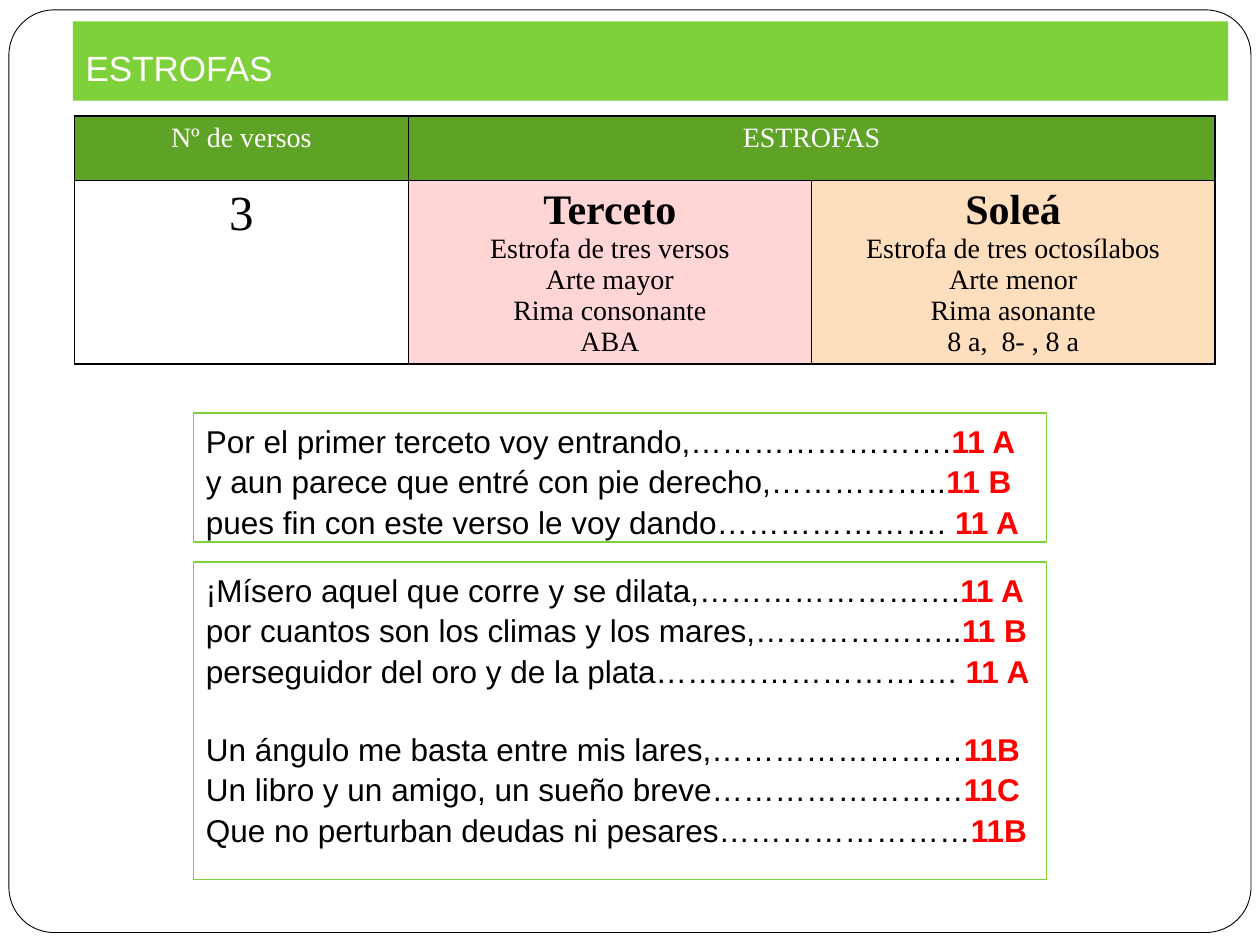
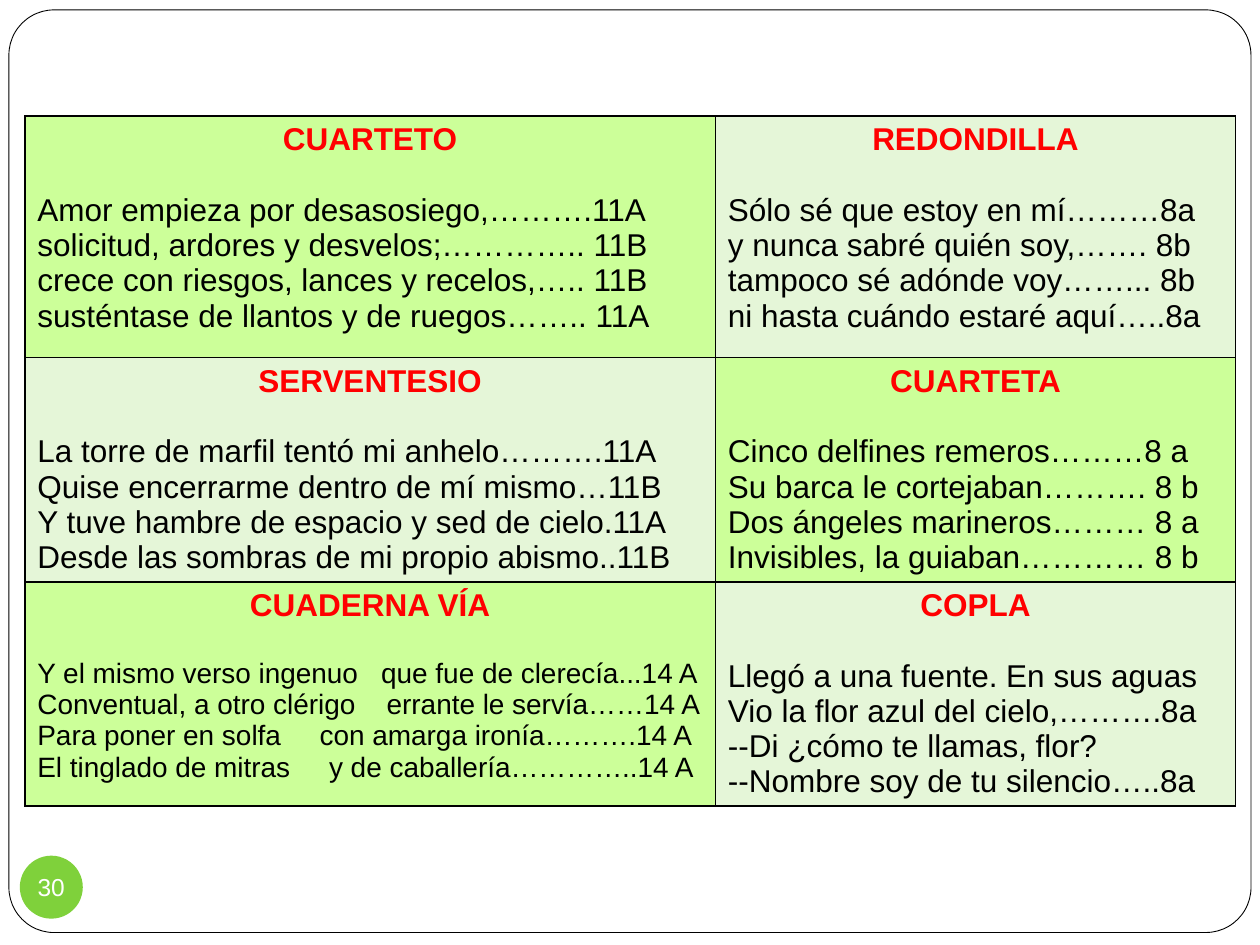
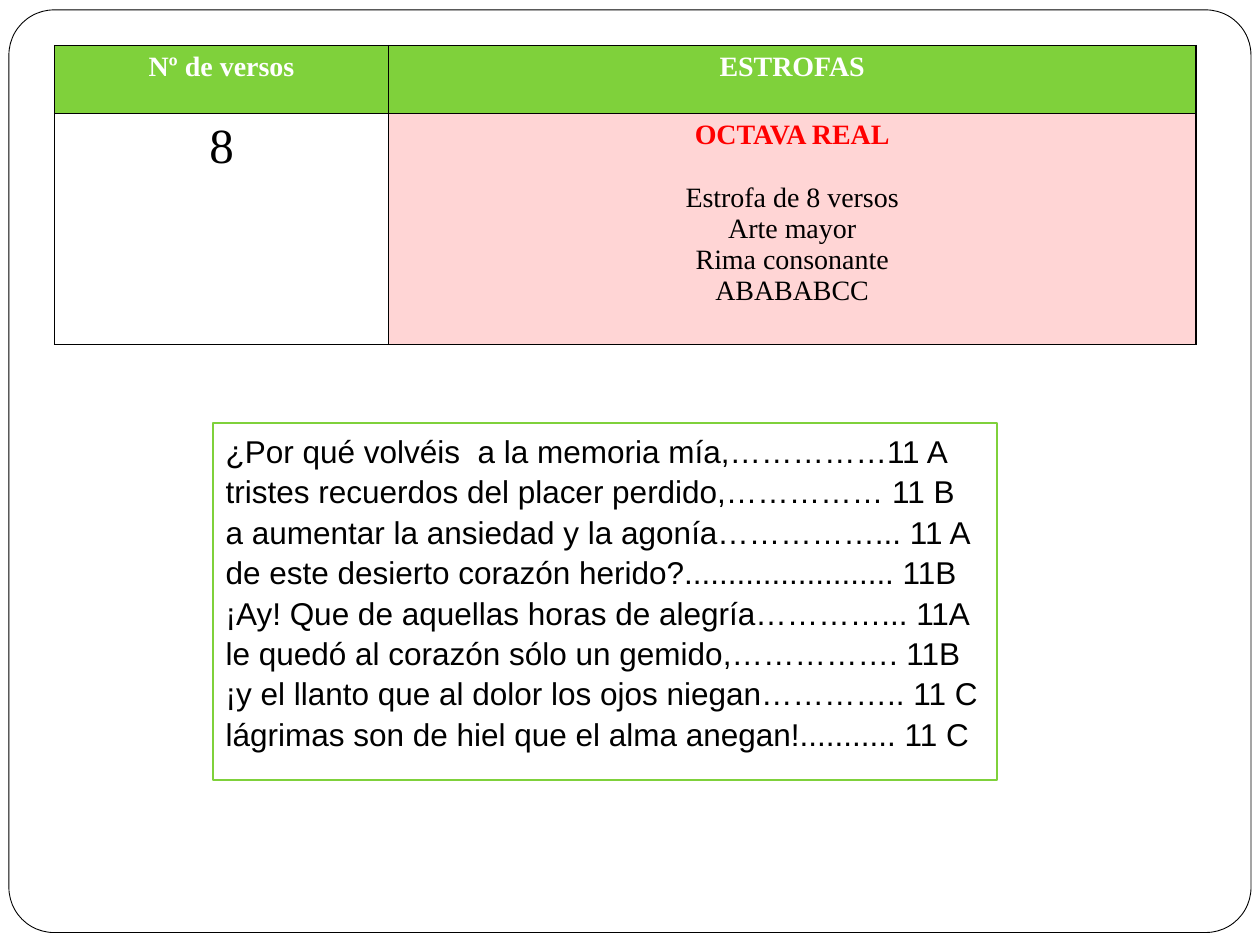
"""Build three slides on Spanish stanza forms."""
import pptx
import pptx.dml.color
import pptx.enum.shapes
import pptx.enum.text
import pptx.oxml
import pptx.oxml.ns
import pptx.util

Cm = pptx.util.Cm
Pt = pptx.util.Pt
RGBColor = pptx.dml.color.RGBColor
ALIGN = pptx.enum.text.PP_ALIGN
ANCHOR = pptx.enum.text.MSO_ANCHOR
SHAPE = pptx.enum.shapes.MSO_SHAPE

BLACK = RGBColor(0, 0, 0)
WHITE = RGBColor(255, 255, 255)
RED = RGBColor(255, 0, 0)
GREEN = RGBColor(0x7F, 0xD1, 0x3B)
DARK_GREEN = RGBColor(0x5F, 0xA3, 0x26)
LIME = RGBColor(0xCC, 0xFF, 0x99)
PALE_GREEN = RGBColor(0xE5, 0xF6, 0xD8)
PINK = RGBColor(0xFF, 0xD5, 0xD5)
PEACH = RGBColor(0xFF, 0xDE, 0xBE)

SANS, SERIF = "Arial", "Times New Roman"
BOX_SPACING = 1.07
VERSE_GAP = Pt(21.6)

TERCETOS = [
    [("Por el primer terceto voy entrando,…………………….", "11 A"),
     ("y aun parece que entré con pie derecho,……………..", "11 B"),
     ("pues fin con este verso le voy dando…………………. ", "11 A")],
    [("¡Mísero aquel que corre y se dilata,…………………….", "11 A"),
     ("por cuantos son los climas y los mares,………………..", "11 B"),
     ("perseguidor del oro y de la plata…….…………………. ", "11 A"),
     ("Un ángulo me basta entre mis lares,……………………", "11B"),
     ("Un libro y un amigo, un sueño breve……………………", "11C"),
     ("Que no perturban deudas ni pesares……………………", "11B")],
]

CUARTETOS = [
    [("CUARTETO", 18,
      ["Amor empieza por desasosiego,……….11A",
       "solicitud, ardores y desvelos;………….. 11B",
       "crece con riesgos, lances y recelos,….. 11B",
       "susténtase de llantos y de ruegos…….. 11A"]),
     ("REDONDILLA", 18,
      ["Sólo sé que estoy en mí………8a",
       "y nunca sabré quién soy,……. 8b",
       "tampoco sé adónde voy……... 8b",
       "ni hasta cuándo estaré aquí…..8a"])],
    [("SERVENTESIO", 18,
      ["La torre de marfil tentó mi anhelo……….11A",
       "Quise encerrarme dentro de mí mismo…11B",
       "Y tuve hambre de espacio y sed de cielo.11A",
       "Desde las sombras de mi propio abismo..11B"]),
     ("CUARTETA", 18,
      ["Cinco delfines remeros………8 a",
       "Su barca le cortejaban………. 8 b",
       "Dos ángeles marineros……… 8 a",
       "Invisibles, la guiaban………… 8 b"])],
    [("CUADERNA VÍA", 16,
      ["Y el mismo verso ingenuo\tque fue de clerecía...14 A",
       "Conventual, a otro clérigo\terrante le servía……14 A",
       "Para poner en solfa\tcon amarga ironía……….14 A",
       "El tinglado de mitras\ty de caballería…………..14 A"]),
     ("COPLA", 18,
      ["Llegó a una fuente. En sus aguas",
       "Vio la flor azul del cielo,……….8a",
       "--Di ¿cómo te llamas, flor?",
       "--Nombre soy de tu silencio…..8a"])],
]
CAESURAS = [6.93, 7.04, 5.69, 5.88]

OCTAVA = [
    "¿Por qué volvéis  a la memoria mía,……………11 A",
    "tristes recuerdos del placer perdido,…………… 11 B",
    "a aumentar la ansiedad y la agonía……………... 11 A",
    "de este desierto corazón herido?........................ 11B",
    "¡Ay! Que de aquellas horas de alegría…………... 11A",
    "le quedó al corazón sólo un gemido,……………. 11B",
    "¡y el llanto que al dolor los ojos niegan………….. 11 C",
    "lágrimas son de hiel que el alma anegan!........... 11 C",
]


def style(size, name=SANS, color=BLACK, bold=False):
    """Return the font format of a run."""
    return {"size": Pt(size), "name": name, "color": color, "bold": bold}


def line(text, font, **para):
    """Return a paragraph made of one run, centred unless told otherwise."""
    return [(text, font)], {"alignment": ALIGN.CENTER, **para}


def write(tf, lines):
    """Fill a text frame with formatted paragraphs."""
    for i, (runs, para) in enumerate(lines):
        p = tf.add_paragraph() if i else tf.paragraphs[0]
        for key, value in para.items():
            setattr(p, key, value)
        for text, font in runs:
            r = p.add_run()
            r.text = text
            for key, value in font.items():
                if key == "color":
                    r.font.color.rgb = value
                else:
                    setattr(r.font, key, value)


def add_shape(s, kind, at, fill, outline=None, width=1):
    """Add a flat preset shape at left, top, width, height in centimetres."""
    sp = s.shapes.add_shape(kind, *map(Cm, at))
    sp.shadow.inherit = False
    sp.fill.solid()
    sp.fill.fore_color.rgb = fill
    if outline is None:
        sp.line.fill.background()
    else:
        sp.line.color.rgb = outline
        sp.line.width = Pt(width)
    return sp


def add_frame(prs, s):
    """Put the rounded page frame on the slide master."""
    sp = add_shape(s, SHAPE.ROUNDED_RECTANGLE, (0.18, 0.2, 25.04, 18.6), WHITE, BLACK, 0.5)
    sp.adjustments[0] = 0.049
    sp.element.nvSpPr.cNvPr.set("id", "100")
    prs.slide_master.shapes.element.insert(2, sp.element)


def add_title(s, text):
    """Format the title placeholder as a green band."""
    sp = s.shapes.title
    box = {"left": 1.47, "top": 0.43, "width": 23.29, "height": 1.6}
    for key, value in box.items():
        setattr(sp, key, Cm(value))
    sp.fill.solid()
    sp.fill.fore_color.rgb = GREEN
    tf = sp.text_frame
    frame = {"vertical_anchor": ANCHOR.BOTTOM, "margin_bottom": Cm(0.25),
             "auto_size": pptx.enum.text.MSO_AUTO_SIZE.NONE}
    for key, value in frame.items():
        setattr(tf, key, value)
    write(tf, [line(text, style(20, color=WHITE), alignment=ALIGN.LEFT)])


def add_poem(s, at, lines):
    """Add a green-edged box that holds verses."""
    sp = add_shape(s, SHAPE.RECTANGLE, at, WHITE, GREEN)
    tf = sp.text_frame
    tf.word_wrap = True
    tf.vertical_anchor = ANCHOR.TOP
    write(tf, lines)


def add_number(s, text):
    """Add the round slide number badge."""
    sp = add_shape(s, SHAPE.OVAL, (0.4, 17.25, 1.27, 1.27), GREEN)
    tf = sp.text_frame
    for side in ("left", "top", "right", "bottom"):
        setattr(tf, "margin_" + side, 0)
    tf.word_wrap = False
    tf.vertical_anchor = ANCHOR.MIDDLE
    write(tf, [line(text, style(14, color=WHITE))])


def add_borders(cell):
    """Draw a black line on each side of a cell."""
    tc_pr = cell._tc.get_or_add_tcPr()
    for i, side in enumerate("LRTB"):
        tc_pr.insert(i, pptx.oxml.parse_xml(
            f'<a:ln{side} {pptx.oxml.ns.nsdecls("a")} w="{Pt(1)}"><a:solidFill>'
            f'<a:srgbClr val="{BLACK}"/></a:solidFill></a:ln{side}>'))


def add_table(s, left, top, cols, rows, cells):
    """Add a bordered table from rows of (fill, lines) cells."""
    shape = s.shapes.add_table(len(rows), len(cols), Cm(left), Cm(top),
                               Cm(sum(cols)), Cm(sum(rows)))
    table = shape.table
    table.first_row = table.horz_banding = False
    for col, width in zip(table.columns, cols):
        col.width = Cm(width)
    for row, height, contents in zip(table.rows, rows, cells):
        row.height = Cm(height)
        for cell, (fill, lines) in zip(row.cells, contents):
            cell.fill.solid()
            cell.fill.fore_color.rgb = fill
            write(cell.text_frame, lines)
            add_borders(cell)
    return table


def header(fill, bold, *titles):
    """Return the header row of a stanza table."""
    font = style(16, SERIF, WHITE, bold)
    return [(fill, [line(text, font)] if text else []) for text in titles]


def count_cell(number):
    """Return the cell that gives the number of verses."""
    return WHITE, [line(number, style(28, SERIF))]


def stanza_cell(fill, name, name_font, traits, gap=0):
    """Return a cell with a stanza name over its traits."""
    lines = [line(text, style(16, SERIF)) for text in traits]
    lines[0][1]["space_before"] = Pt(gap)
    return fill, [line(name, name_font)] + lines


def example_cell(fill, name, size, verses):
    """Return a cell with a red stanza name over example verses."""
    lines = [line(text, style(size), alignment=ALIGN.JUSTIFY) for text in verses]
    lines[0][1]["space_before"] = Pt(20.1)
    return fill, [line(name, style(18, color=RED, bold=True))] + lines


def set_tabs(tf, stops):
    """Give each verse below the heading its own tab stop."""
    for p, stop in zip(tf.paragraphs[1:], stops):
        p._p.get_or_add_pPr().append(pptx.oxml.parse_xml(
            f'<a:tabLst {pptx.oxml.ns.nsdecls("a")}><a:tab pos="{Cm(stop)}" algn="l"/></a:tabLst>'))


def rhymed_lines(verses):
    """Return verses with a bold red metre, parted every three lines."""
    return [([(text, style(18)), (metre, style(18, color=RED, bold=True))],
             {"alignment": ALIGN.LEFT, "line_spacing": BOX_SPACING,
              "space_before": VERSE_GAP if i and i % 3 == 0 else 0})
            for i, (text, metre) in enumerate(verses)]


def build_tercetos(s):
    """Build the slide on three-line stanzas."""
    add_title(s, "ESTROFAS")
    name_font = style(24, SERIF, bold=True)
    table = add_table(s, 1.5, 2.34, [6.73, 8.13, 8.13], [1.3, 3.7], [
        header(DARK_GREEN, False, "Nº de versos", "ESTROFAS", ""),
        [count_cell("3"),
         stanza_cell(PINK, "Terceto", name_font,
                     ["Estrofa de tres versos", "Arte mayor", "Rima consonante", "ABA"]),
         stanza_cell(PEACH, "Soleá", name_font,
                     ["Estrofa de tres octosílabos", "Arte menor", "Rima asonante",
                      "8 a,  8- , 8 a"])]])
    table.cell(0, 1).merge(table.cell(0, 2))
    for (top, height), verses in zip([(8.33, 2.6), (11.33, 6.4)], TERCETOS):
        add_poem(s, (3.9, top, 17.2, height), rhymed_lines(verses))


def build_cuartetos(s):
    """Build the slide of four-line examples."""
    add_number(s, "30")
    fills = [LIME, PALE_GREEN]
    cells = [[example_cell(fills[(i + j) % 2], *stanza) for j, stanza in enumerate(row)]
             for i, row in enumerate(CUARTETOS)]
    table = add_table(s, 0.5, 2.34, [13.92, 10.49], [4.87, 4.5, 4.5], cells)
    set_tabs(table.cell(2, 0).text_frame, CAESURAS)


def build_octava(s):
    """Build the slide on the eight-line stanza."""
    add_table(s, 1.1, 0.92, [6.73, 16.28], [1.37, 4.65], [
        header(GREEN, True, "Nº de versos", "ESTROFAS"),
        [count_cell("8"),
         stanza_cell(PINK, "OCTAVA REAL", style(16, SERIF, RED, True),
                     ["Estrofa de 8 versos", "Arte mayor", "Rima consonante", "ABABABCC"],
                     gap=17.9)]])
    add_poem(s, (4.3, 8.53, 15.8, 7.19),
             [line(text, style(18), alignment=ALIGN.LEFT, line_spacing=BOX_SPACING)
              for text in OCTAVA])


def main():
    """Build and save the presentation."""
    prs = pptx.Presentation()
    prs.slide_width, prs.slide_height = Cm(25.4), Cm(19.05)
    title_only, blank = prs.slide_layouts[5], prs.slide_layouts[6]
    pages = [(title_only, build_tercetos), (blank, build_cuartetos), (blank, build_octava)]
    for i, (layout, build) in enumerate(pages):
        s = prs.slides.add_slide(layout)
        if i == 0:
            add_frame(prs, s)
        build(s)
    prs.save("out.pptx")


if __name__ == "__main__":
    main()
